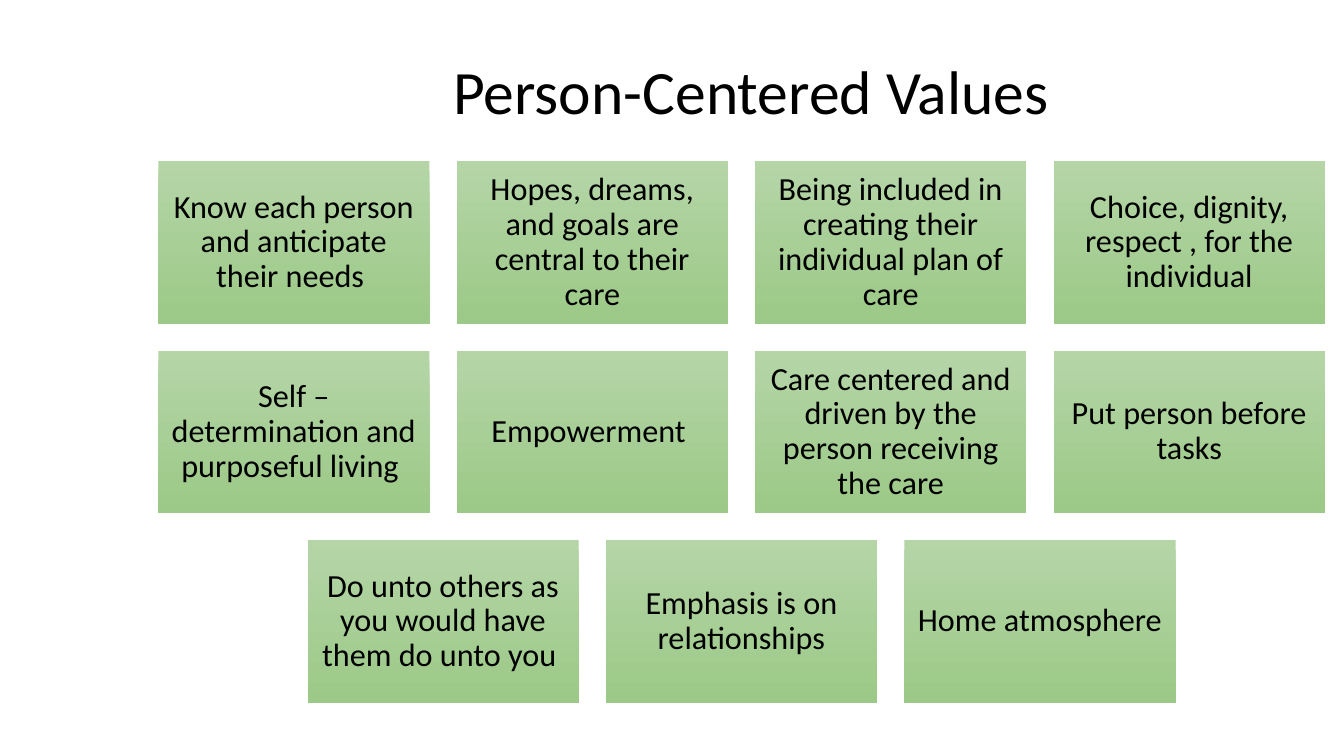
"""Build the Person-Centered Values slide."""
from pptx import Presentation
from pptx.dml.color import RGBColor
from pptx.enum.shapes import MSO_SHAPE
from pptx.enum.text import MSO_ANCHOR, PP_ALIGN
from pptx.util import Inches, Pt

BLACK = RGBColor(0x00, 0x00, 0x00)
LIGHT_GREEN = RGBColor(0xB5, 0xD5, 0xA7)
DARK_GREEN = RGBColor(0x9C, 0xC9, 0x87)
FONT = "Calibri"

SLIDE_WIDTH, SLIDE_HEIGHT = 13.33, 7.5
GRID_LEFT, GRID_TOP = 1.57, 1.6
CARD_WIDTH, CARD_HEIGHT = 2.69, 1.61
GAP = 0.27
COLUMNS = 4

VALUES = [
    [
        "Know each person and anticipate their needs ",
        "Hopes, dreams, and goals are central to their care",
        "Being included in creating their individual plan of care",
        "Choice, dignity, respect , for the individual",
    ],
    [
        "Self – determination and purposeful living ",
        "Empowerment ",
        "Care centered and driven by the person receiving the care",
        "Put person before tasks",
    ],
    [
        "Do unto others as you would have them do unto you ",
        "Emphasis is on relationships",
        "Home atmosphere",
    ],
]


def write_text(shape, text, size):
    """Write one centred paragraph in the middle of a shape."""
    frame = shape.text_frame
    frame.word_wrap = True
    frame.vertical_anchor = MSO_ANCHOR.MIDDLE
    paragraph = frame.paragraphs[0]
    paragraph.alignment = PP_ALIGN.CENTER
    paragraph.line_spacing = 0.9
    run = paragraph.add_run()
    run.text = text
    run.font.name = FONT
    run.font.size = Pt(size)
    run.font.color.rgb = BLACK


def add_title(slide, text):
    """Place the title between the grid's left edge and the slide's right edge."""
    title = slide.shapes.title
    title.left, title.top = Inches(GRID_LEFT), Inches(0.31)
    title.width, title.height = Inches(SLIDE_WIDTH - GRID_LEFT), Inches(1.25)
    write_text(title, text, 44)


def add_card(slide, column, row, text):
    """Add a green gradient card at a grid position."""
    card = slide.shapes.add_shape(
        MSO_SHAPE.RECTANGLE,
        Inches(GRID_LEFT + column * (CARD_WIDTH + GAP)),
        Inches(GRID_TOP + row * (CARD_HEIGHT + GAP)),
        Inches(CARD_WIDTH),
        Inches(CARD_HEIGHT),
    )
    card.shadow.inherit = False
    card.line.fill.background()
    card.fill.gradient()
    card.fill.gradient_angle = 270
    for stop, color in zip(card.fill.gradient_stops, (LIGHT_GREEN, DARK_GREEN)):
        stop.color.rgb = color
    frame = card.text_frame
    frame.margin_left = frame.margin_right = Inches(0.1)
    frame.margin_top = frame.margin_bottom = Inches(0.1)
    write_text(card, text, 23)


def main():
    """Build and save the slide."""
    presentation = Presentation()
    presentation.slide_width = Inches(SLIDE_WIDTH)
    presentation.slide_height = Inches(SLIDE_HEIGHT)
    slide = presentation.slides.add_slide(presentation.slide_layouts[5])
    add_title(slide, "Person-Centered Values")
    for row, texts in enumerate(VALUES):
        first_column = (COLUMNS - len(texts)) / 2
        for index, text in enumerate(texts):
            add_card(slide, first_column + index, row, text)
    presentation.save("out.pptx")


if __name__ == "__main__":
    main()
